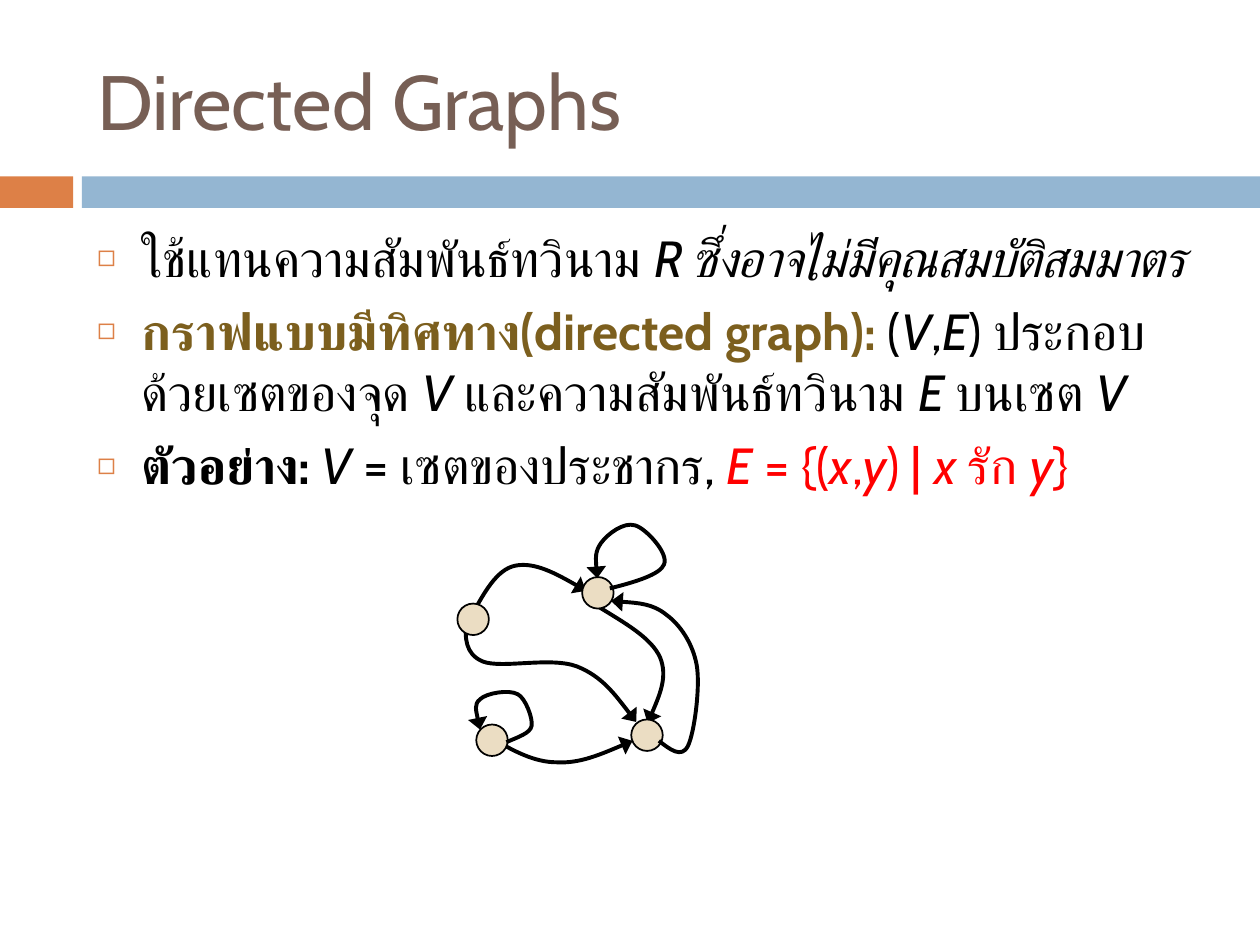
from lxml import etree
from pptx import Presentation
from pptx.dml.color import RGBColor
from pptx.enum.lang import MSO_LANGUAGE_ID
from pptx.enum.shapes import MSO_SHAPE
from pptx.enum.text import MSO_ANCHOR, MSO_AUTO_SIZE, PP_ALIGN
from pptx.oxml.ns import qn
from pptx.util import Inches, Pt

RECTANGLE, OVAL = MSO_SHAPE.RECTANGLE, MSO_SHAPE.OVAL
TOP, MIDDLE = MSO_ANCHOR.TOP, MSO_ANCHOR.MIDDLE
LEFT = PP_ALIGN.LEFT
NO_AUTOFIT = MSO_AUTO_SIZE.NONE
THAI = MSO_LANGUAGE_ID.THAI

FONT = "Cabin"
COLORS = {
    "title": "775F55", "orange": "DD8047", "blue": "94B6D2", "black": "000000",
    "term": "7C5F1E", "red": "FF0000", "node": "EBDDC3",
}

# Each run: text, style letters (b bold, i italic), colour name
BULLETS = [
    [("ใช้แทนความสัมพันธ์ทวินาม ", "", "black"),
     ("R ซึ่งอาจไม่มีคุณสมบัติสมมาตร", "i", "black")],
    [("กราฟแบบมีทิศทาง(directed graph): ", "b", "term"),
     ("(", "", "black"), ("V", "i", "black"), (",", "", "black"),
     ("E", "i", "black"), (") ประกอบด้วยเซตของจุด ", "", "black"),
     ("V ", "i", "black"), ("และความสัมพันธ์ทวินาม ", "", "black"),
     ("E ", "i", "black"), ("บนเซต ", "", "black"), ("V", "i", "black")],
    [("ตัวอย่าง: ", "b", "black"), ("V", "i", "black"),
     (" = เซตของประชากร, ", "", "black"), ("E ", "i", "red"),
     ("= {(", "", "red"), ("x", "i", "red"), (",", "", "red"),
     ("y", "i", "red"), (") | ", "", "red"), ("x ", "i", "red"),
     ("รัก ", "", "red"), ("y", "i", "red"), ("}", "", "red")],
]

# Graph geometry in inches from the graph's corner
NODE_SIZE = 0.25
NODES = [(0.03, 0.69), (1.41, 1.61), (1.02, 0.48), (0.18, 1.65)]
# Each edge: a start point, then groups of three Bezier points
EDGES_BEHIND = [
    [(0.14, 0.79), (0.24, 0.61), (0.34, 0.42), (0.49, 0.39),
     (0.64, 0.36), (0.85, 0.47), (1.05, 0.59)],
    [(1.14, 0.71), (1.35, 0.84), (1.57, 0.96), (1.64, 1.12),
     (1.7, 1.27), (1.62, 1.46), (1.54, 1.64)],
    [(0.32, 1.77), (0.48, 1.86), (0.64, 1.95), (0.82, 1.95),
     (1, 1.96), (1.21, 1.87), (1.42, 1.78)],
    [(0.1, 0.83), (0.09, 0.96), (0.09, 1.09), (0.23, 1.15),
     (0.38, 1.21), (0.77, 1.11), (0.98, 1.19),
     (1.18, 1.27), (1.31, 1.45), (1.45, 1.63)],
]
EDGES_FRONT = [
    [(1.24, 0.57), (1.44, 0.52), (1.64, 0.46), (1.67, 0.38),
     (1.71, 0.29), (1.52, 0.09), (1.44, 0.07),
     (1.35, 0.04), (1.22, 0.14), (1.17, 0.21),
     (1.12, 0.28), (1.13, 0.38), (1.14, 0.49)],
    [(0.42, 1.79), (0.51, 1.75), (0.61, 1.72), (0.62, 1.66),
     (0.63, 1.6), (0.57, 1.44), (0.51, 1.41),
     (0.44, 1.37), (0.26, 1.4), (0.21, 1.45),
     (0.16, 1.49), (0.19, 1.59), (0.21, 1.69)],
    [(1.63, 1.78), (1.72, 1.85), (1.81, 1.92), (1.86, 1.82),
     (1.91, 1.72), (1.96, 1.35), (1.93, 1.18),
     (1.9, 1.01), (1.8, 0.86), (1.69, 0.78),
     (1.58, 0.69), (1.41, 0.68), (1.25, 0.67)],
]


def color(name):
    return RGBColor.from_string(COLORS[name])


def place(shape, left, top, width, height):
    shape.left, shape.top = Inches(left), Inches(top)
    shape.width, shape.height = Inches(width), Inches(height)


def add_filled(slide, kind, left, top, width, height, fill):
    shape = slide.shapes.add_shape(
        kind, Inches(left), Inches(top), Inches(width), Inches(height))
    shape.shadow.inherit = False
    shape.fill.solid()
    shape.fill.fore_color.rgb = color(fill)
    shape.line.fill.background()
    return shape


def add_band(slide, left, top, width, height):
    tab, gap = 0.58, 0.07
    add_filled(slide, RECTANGLE, left, top, tab, height, "orange")
    add_filled(slide, RECTANGLE, left + tab + gap, top,
               width - tab - gap, height, "blue")


def fill_title(slide, *box):
    title = slide.shapes.title
    place(title, *box)
    frame = title.text_frame
    frame.text = "Directed Graphs"
    frame.auto_size = NO_AUTOFIT
    frame.vertical_anchor = MIDDLE
    paragraph = frame.paragraphs[0]
    paragraph.alignment = LEFT
    paragraph.font.name = FONT
    paragraph.font.size = Pt(44)
    paragraph.font.color.rgb = color("title")


def add_bullet(paragraph):
    properties = paragraph._p.get_or_add_pPr()
    properties.set("marL", str(Inches(0.35)))
    properties.set("indent", str(-Inches(0.35)))
    bullet_color = etree.SubElement(properties, qn("a:buClr"))
    etree.SubElement(bullet_color, qn("a:srgbClr"), val=COLORS["orange"])
    etree.SubElement(properties, qn("a:buSzPct"), val="60000")
    etree.SubElement(properties, qn("a:buChar"), char="◻")


def fill_body(slide, *box):
    body = slide.placeholders[1]
    place(body, *box)
    frame = body.text_frame
    frame.auto_size = NO_AUTOFIT
    frame.vertical_anchor = TOP
    for index, runs in enumerate(BULLETS):
        paragraph = frame.add_paragraph() if index else frame.paragraphs[0]
        add_bullet(paragraph)
        paragraph.space_before = Pt(7)
        paragraph.font.name = FONT
        paragraph.font.size = Pt(29)
        for text, style, color_name in runs:
            run = paragraph.add_run()
            run.text = text
            run.font.language_id = THAI
            run.font.bold = "b" in style
            run.font.italic = "i" in style
            run.font.color.rgb = color(color_name)


def add_edge(slide, left, top, points):
    start, *rest = [(Inches(left + x), Inches(top + y)) for x, y in points]
    builder = slide.shapes.build_freeform(*start)
    builder.add_line_segments(rest, close=False)
    edge = builder.convert_to_shape()
    edge.shadow.inherit = False
    edge.fill.background()
    edge.line.color.rgb = color("black")
    edge.line.width = Pt(2.25)
    etree.SubElement(edge.line._get_or_add_ln(), qn("a:tailEnd"),
                     type="triangle", w="lg", len="med")
    # Join every three line segments into one Bezier curve
    segments = list(edge._element.iter(qn("a:lnTo")))
    for first in range(0, len(segments), 3):
        curve = etree.Element(qn("a:cubicBezTo"))
        segments[first].addprevious(curve)
        for segment in segments[first:first + 3]:
            curve.append(segment[0])
            segment.getparent().remove(segment)


def add_graph(slide, left, top):
    for points in EDGES_BEHIND:
        add_edge(slide, left, top, points)
    for x, y in NODES:
        node = add_filled(slide, OVAL, left + x, top + y,
                          NODE_SIZE, NODE_SIZE, "node")
        node.line.color.rgb = color("black")
        node.line.width = Pt(1)
    for points in EDGES_FRONT:
        add_edge(slide, left, top, points)


def main():
    presentation = Presentation()
    presentation.slide_width, presentation.slide_height = Inches(10), Inches(7.5)
    slide = presentation.slides.add_slide(presentation.slide_layouts[1])
    add_band(slide, 0, 1.4, 10, 0.25)
    fill_title(slide, 0.67, 0.25, 8.92, 1.08)
    fill_body(slide, 0.67, 1.75, 8.92, 4.92)
    add_graph(slide, 3.6, 4.1)
    presentation.save("out.pptx")


if __name__ == "__main__":
    main()
